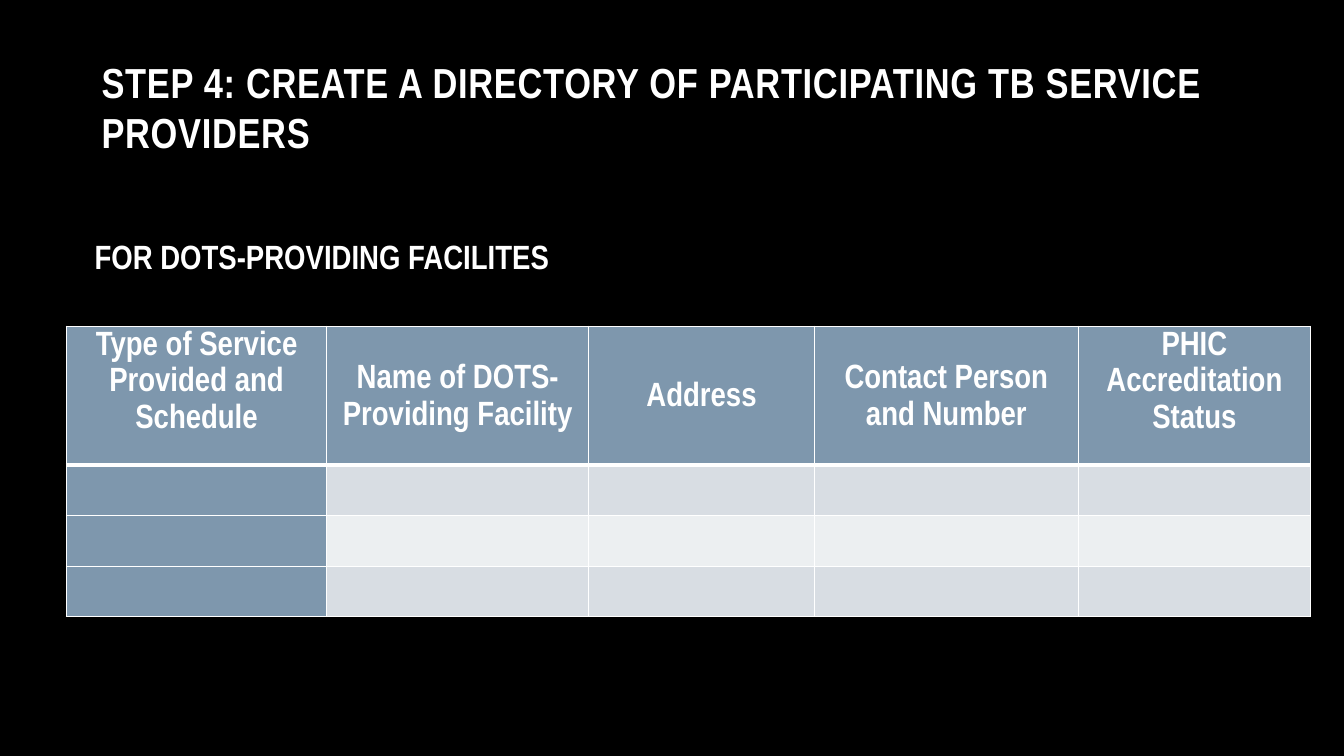
from lxml import etree
from pptx import Presentation
from pptx.dml.color import RGBColor
from pptx.enum.text import MSO_ANCHOR, PP_ALIGN
from pptx.oxml.ns import qn
from pptx.util import Pt

TOP, MID, LOW = MSO_ANCHOR.TOP, MSO_ANCHOR.MIDDLE, MSO_ANCHOR.BOTTOM
CENTER = PP_ALIGN.CENTER
BLACK = RGBColor(0x00, 0x00, 0x00)
WHITE = RGBColor(0xFF, 0xFF, 0xFF)
STEEL = RGBColor(0x7E, 0x97, 0xAD)
BANDS = RGBColor(0xD8, 0xDD, 0xE3), RGBColor(0xEC, 0xEF, 0xF1)

HEADS = [
    ("Type of Service Provided and Schedule", TOP),
    ("Name of DOTS- Providing Facility", MID),
    ("Address", MID),
    ("Contact Person and Number", MID),
    ("PHIC Accreditation Status", TOP),
]
WIDTHS = [185.8, 187.2, 161.3, 188.4, 166]
HEIGHTS = [99.3, 36.1, 36.1, 36.1]


class Page:
    font = "Arial Narrow"

    def __init__(self, deck):
        self.slide = deck.slides.add_slide(deck.slide_layouts[6])
        fill = self.slide.background.fill
        fill.solid()
        fill.fore_color.rgb = BLACK

    def style(self, para, size, track=0):
        for run in para.runs:
            font = run.font
            font.name, font.size, font.bold = self.font, Pt(size), True
            font.color.rgb = WHITE
            if track:
                font._element.set("spc", str(track))

    def text(self, words, x, y, w, h, size, anchor=TOP, track=0):
        box = self.slide.shapes.add_textbox(Pt(x), Pt(y), Pt(w), Pt(h))
        frame = box.text_frame
        frame.word_wrap = True
        frame.vertical_anchor = anchor
        frame.text = words
        self.style(frame.paragraphs[0], size, track)

    def border(self, cell, top, base):
        props = cell._tc.get_or_add_tcPr()
        for tag, width in (("lnL", 1), ("lnR", 1), ("lnT", top), ("lnB", base)):
            line = etree.SubElement(props, qn("a:" + tag), w=str(Pt(width)))
            fill = etree.SubElement(line, qn("a:solidFill"))
            etree.SubElement(fill, qn("a:srgbClr"), val=str(WHITE))

    def head(self, cell, words, anchor):
        cell.margin_left = cell.margin_right = Pt(5)
        cell.margin_top = cell.margin_bottom = 0
        cell.vertical_anchor = anchor
        cell.text_frame.text = words
        para = cell.text_frame.paragraphs[0]
        para.alignment = CENTER
        para.line_spacing = 1.15
        self.style(para, 24)

    def table(self, x, y, widths, heights, heads):
        grid = self.slide.shapes.add_table(
            len(heights), len(widths), Pt(x), Pt(y),
            Pt(sum(widths)), Pt(sum(heights))).table
        grid.horz_banding = False
        for col, width in zip(grid.columns, widths):
            col.width = Pt(width)
        for r, height in enumerate(heights):
            grid.rows[r].height = Pt(height)
            for c, (words, anchor) in enumerate(heads):
                cell = grid.cell(r, c)
                # Thick rule between the header and the first body row
                self.border(cell, 3 if r == 1 else 1, 3 if r == 0 else 1)
                cell.fill.solid()
                accent = r == 0 or c == 0
                cell.fill.fore_color.rgb = STEEL if accent else BANDS[(r - 1) % 2]
                if r == 0:
                    self.head(cell, words, anchor)


def main():
    deck = Presentation()
    deck.slide_width, deck.slide_height = Pt(960), Pt(540)
    page = Page(deck)

    # Title and subtitle
    page.text("STEP 4: CREATE A DIRECTORY OF PARTICIPATING TB SERVICE PROVIDERS",
              65.5, 49.7, 832.3, 66.2, 30, LOW, 50)
    page.text("FOR DOTS-PROVIDING FACILITES", 60.5, 164.9, 420.5, 36, 24)

    # Directory table
    page.table(47.5, 233, WIDTHS, HEIGHTS, HEADS)

    deck.save("out.pptx")


if __name__ == "__main__":
    main()
